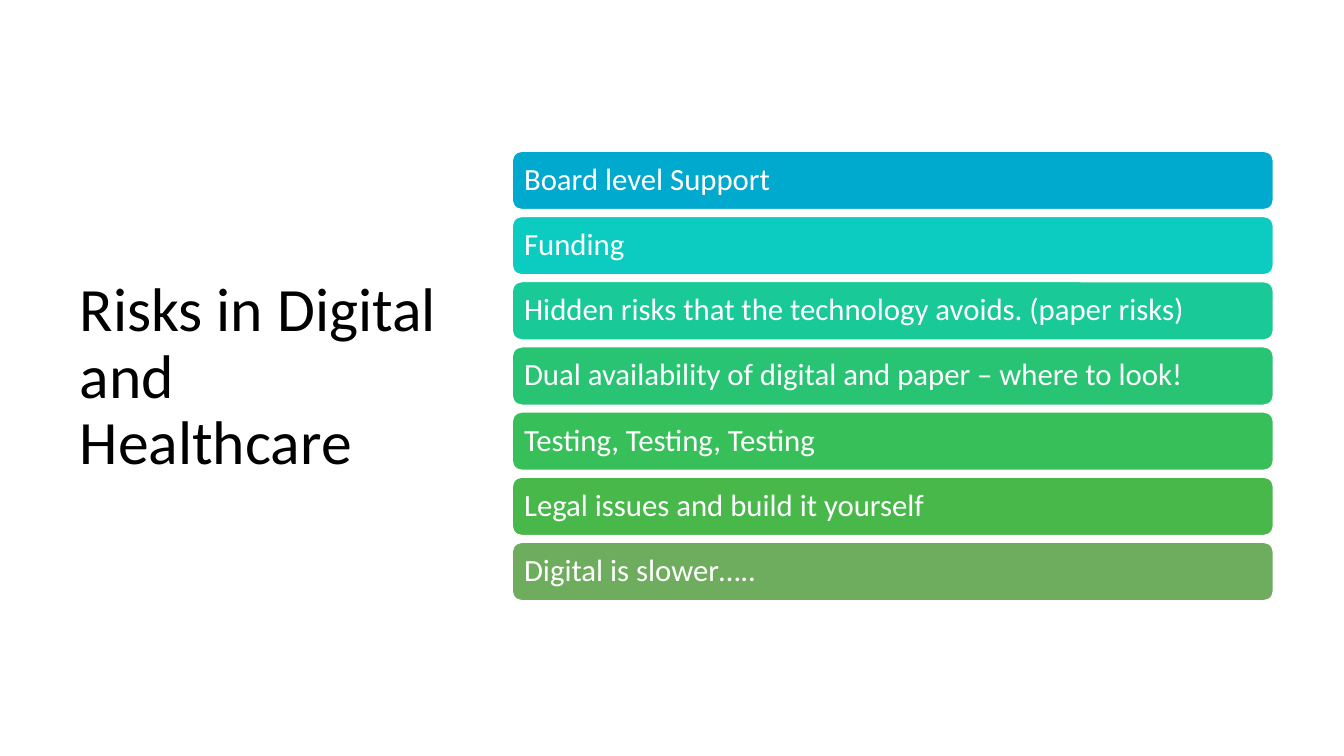
"""Build the slide listing the risks in digital and healthcare."""
from pptx import Presentation
from pptx.dml.color import RGBColor
from pptx.enum.shapes import MSO_SHAPE
from pptx.enum.text import MSO_ANCHOR, PP_ALIGN
from pptx.util import Inches, Pt

BLACK = RGBColor(0x00, 0x00, 0x00)
WHITE = RGBColor(0xFF, 0xFF, 0xFF)
BLUE = RGBColor(0x00, 0xA9, 0xCE)
TURQUOISE = RGBColor(0x0C, 0xCC, 0xC2)
AQUA_GREEN = RGBColor(0x19, 0xC9, 0x97)
EMERALD = RGBColor(0x28, 0xC4, 0x73)
BRIGHT_GREEN = RGBColor(0x37, 0xBF, 0x59)
LEAF_GREEN = RGBColor(0x48, 0xB8, 0x4A)
SAGE = RGBColor(0x6E, 0xAD, 0x5D)

HEADING = "Risks in Digital and Healthcare"
RISKS = [
    ("Board level Support", BLUE),
    ("Funding", TURQUOISE),
    ("Hidden risks that the technology avoids. (paper risks)", AQUA_GREEN),
    ("Dual availability of digital and paper – where to look!", EMERALD),
    ("Testing, Testing, Testing", BRIGHT_GREEN),
    ("Legal issues and build it yourself", LEAF_GREEN),
    ("Digital is slower…..", SAGE),
]

FIRST_TOP, LAST_TOP = 1.5, 5.38
BAR_LEFT, BAR_WIDTH, BAR_HEIGHT = 5.08, 7.55, 0.58
BAR_INSET = Inches(0.09)


def write(frame, words, size, color):
    """Put one left-aligned, vertically centred paragraph in a frame."""
    frame.text = words
    frame.word_wrap = True
    frame.vertical_anchor = MSO_ANCHOR.MIDDLE
    paragraph = frame.paragraphs[0]
    paragraph.alignment = PP_ALIGN.LEFT
    paragraph.line_spacing = 0.9
    paragraph.font.name = "Calibri"
    paragraph.font.size = Pt(size)
    paragraph.font.color.rgb = color


def add_risk(slide, top, risk, color):
    """Draw one risk as a rounded bar."""
    bar = slide.shapes.add_shape(
        MSO_SHAPE.ROUNDED_RECTANGLE,
        Inches(BAR_LEFT), Inches(top), Inches(BAR_WIDTH), Inches(BAR_HEIGHT),
    )
    bar.shadow.inherit = False
    bar.fill.solid()
    bar.fill.fore_color.rgb = color
    bar.line.color.rgb = WHITE
    bar.line.width = Pt(1)
    frame = bar.text_frame
    frame.margin_left = frame.margin_right = BAR_INSET
    frame.margin_top = frame.margin_bottom = BAR_INSET
    write(frame, risk, 22, WHITE)


def main():
    """Lay out the heading and the column of risks."""
    deck = Presentation()
    deck.slide_width, deck.slide_height = Inches(13.33), Inches(7.5)
    slide = deck.slides.add_slide(deck.slide_layouts[5])

    heading = slide.shapes.title
    heading.left, heading.top = Inches(0.69), Inches(0.7)
    heading.width, heading.height = Inches(3.74), Inches(6.11)
    write(heading.text_frame, HEADING, 44, BLACK)

    pitch = (LAST_TOP - FIRST_TOP) / (len(RISKS) - 1)
    for row, (risk, color) in enumerate(RISKS):
        add_risk(slide, FIRST_TOP + row * pitch, risk, color)

    deck.save("out.pptx")


if __name__ == "__main__":
    main()
